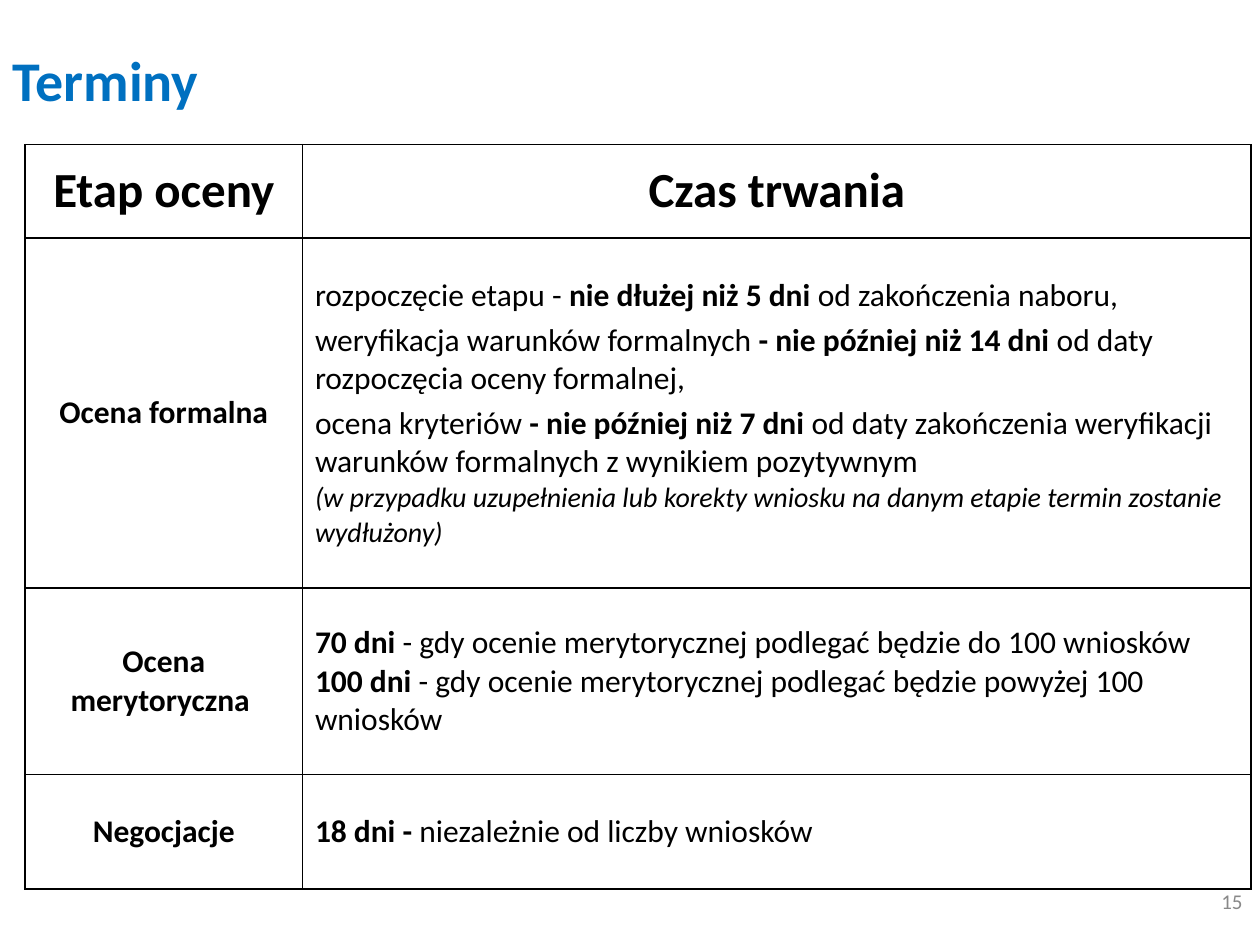
from dataclasses import dataclass

from lxml.etree import SubElement
from pptx import Presentation
from pptx.dml.color import RGBColor as RGB
from pptx.enum.text import MSO_ANCHOR as Anchor, PP_ALIGN as Align
from pptx.oxml.ns import qn
from pptx.util import Inches, Pt


@dataclass(frozen=True)
class Theme:
    font: str = "Calibri"
    accent: RGB = RGB(0x00, 0x70, 0xC0)
    ink: RGB = RGB(0, 0, 0)
    muted: RGB = RGB(0x89, 0x89, 0x89)
    paper: RGB = RGB(0xFF, 0xFF, 0xFF)
    title: int = 32
    header: int = 28
    body: int = 18
    remark: int = 16
    footer: int = 12
    border: int = 1


THEME = Theme()


def write(p, text, size=THEME.body, color=THEME.ink, bold=False, italic=False):
    """Add one formatted run to a paragraph."""
    r = p.add_run()
    r.text = text
    font = r.font
    font.name, font.size, font.color.rgb = THEME.font, Pt(size), color
    font.bold, font.italic = bold, italic


class SlideBuilder:
    def __init__(self, prs, theme):
        self.prs, self.theme = prs, theme
        self.slide = prs.slides.add_slide(prs.slide_layouts[5])

    def box(self, x, y, w, h):
        """Turn shares of the slide's size into lengths."""
        width, height = self.prs.slide_width, self.prs.slide_height
        return [round(v) for v in (x * width, y * height, w * width, h * height)]

    def title(self, text, *share):
        sp = self.slide.shapes.title
        sp.left, sp.top, sp.width, sp.height = self.box(*share)
        tf = sp.text_frame
        tf.vertical_anchor = Anchor.MIDDLE
        p = tf.paragraphs[0]
        p.alignment = Align.LEFT
        write(p, text, size=self.theme.title, color=self.theme.accent, bold=True)

    def page_number(self, text, *share):
        tf = self.slide.shapes.add_textbox(*self.box(*share)).text_frame
        tf.word_wrap = True
        tf.vertical_anchor = Anchor.MIDDLE
        p = tf.paragraphs[0]
        p.alignment = Align.RIGHT
        write(p, text, size=self.theme.footer, color=self.theme.muted)

    def table(self, rows, col_widths, row_heights, *share):
        frame = self.slide.shapes.add_table(len(rows), len(col_widths), *self.box(*share))
        table = frame.table
        table.first_row = table.horz_banding = False
        for col, width in zip(table.columns, col_widths):
            col.width = Inches(width)
        for row, height in zip(table.rows, row_heights):
            row.height = Inches(height)
        for i, row in enumerate(rows):
            for j, paragraphs in enumerate(row):
                centred = i == 0 or j == 0
                self.cell(table.cell(i, j), paragraphs, Align.CENTER if centred else Align.LEFT)

    def cell(self, cell, paragraphs, align):
        cell.vertical_anchor = Anchor.MIDDLE
        self.borders(cell)
        cell.fill.solid()
        cell.fill.fore_color.rgb = self.theme.paper
        tf = cell.text_frame
        for i, (runs, space) in enumerate(paragraphs):
            p = tf.add_paragraph() if i else tf.paragraphs[0]
            p.alignment = align
            if space:
                p.space_before = Pt(space)
            for text, style in runs:
                write(p, text, **style)

    def borders(self, cell):
        props = cell._tc.get_or_add_tcPr()
        for side in ("lnL", "lnR", "lnT", "lnB"):
            ln = SubElement(props, qn(f"a:{side}"), w=str(Pt(self.theme.border)))
            fill = SubElement(ln, qn("a:solidFill"))
            SubElement(fill, qn("a:srgbClr"), val=str(self.theme.ink))


# Text styles and the gap before a list item
PLAIN, BOLD = {}, {"bold": True}
HEADER = {"bold": True, "size": THEME.header}
REMARK = {"italic": True, "size": THEME.remark}
GAP = 3.6


def para(*runs, space=0):
    return runs, space


def label(text, style=BOLD):
    return [para((text, style))]


STAGES = [
    [label("Etap oceny", HEADER), label("Czas trwania", HEADER)],
    [label("Ocena formalna"), [
        para(("rozpoczęcie etapu - ", PLAIN), ("nie dłużej niż 5 dni ", BOLD),
             ("od zakończenia naboru,", PLAIN)),
        para(("weryfikacja warunków formalnych ", PLAIN), ("- nie później niż 14 dni ", BOLD),
             ("od daty rozpoczęcia oceny formalnej,", PLAIN), space=GAP),
        para(("ocena kryteriów", PLAIN), (" - nie później niż 7 dni ", BOLD),
             ("od daty zakończenia weryfikacji warunków formalnych z wynikiem pozytywnym", PLAIN),
             space=GAP),
        para(("(w przypadku uzupełnienia lub korekty wniosku na danym etapie "
              "termin zostanie wydłużony)", REMARK)),
    ]],
    [label("Ocena merytoryczna "), [
        para(("70 dni ", BOLD),
             ("- gdy ocenie merytorycznej podlegać będzie do 100 wniosków", PLAIN)),
        para(("100 dni ", BOLD),
             ("- gdy ocenie merytorycznej podlegać będzie powyżej 100 wniosków", PLAIN)),
    ]],
    [label("Negocjacje"), [
        para(("18 dni - ", BOLD), ("niezależnie od liczby wniosków", PLAIN)),
    ]],
]


def main():
    prs = Presentation()
    prs.slide_width, prs.slide_height = Inches(10), Inches(7.5)
    s = SlideBuilder(prs, THEME)

    # Heading and page number
    s.title("Terminy", 0, 0, 0.9, 1 / 6)
    s.page_number("15", 0.763, 0.927, 0.233, 0.053)

    # Deadlines for each stage of the assessment
    s.table(STAGES, (2.2, 7.53), (0.74, 2.78, 1.48, 0.91), 0.02, 0.153, 0.973, 0.788)

    prs.save("out.pptx")


if __name__ == "__main__":
    main()
